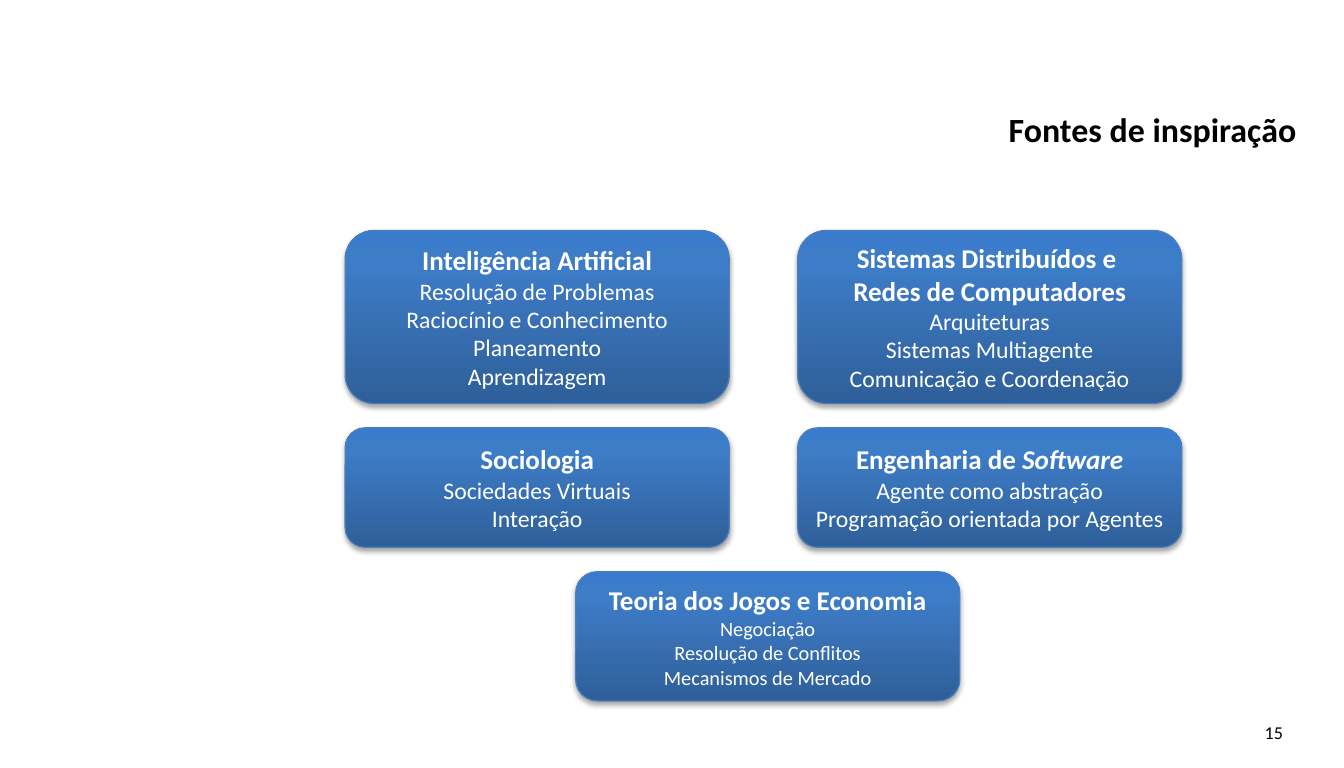
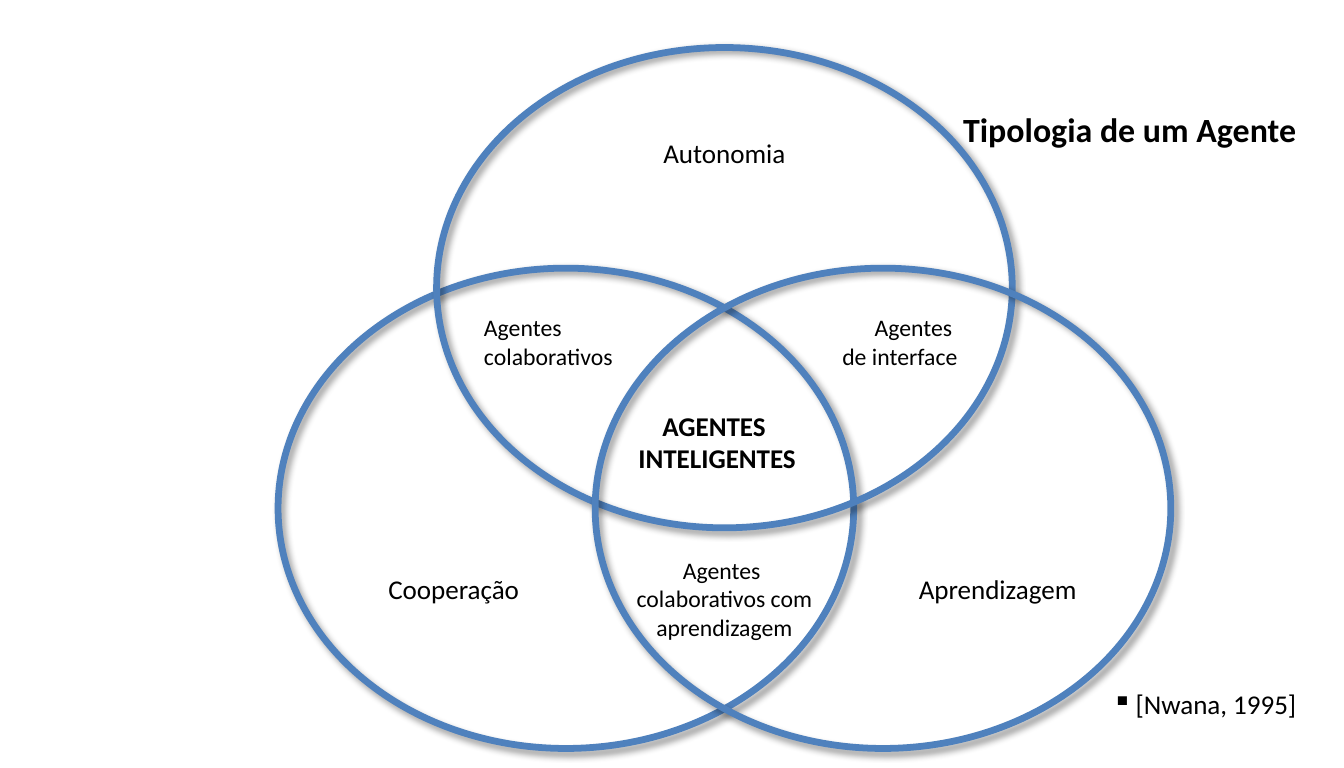
from dataclasses import dataclass

from pptx import Presentation
from pptx.dml.color import RGBColor
from pptx.enum.shapes import MSO_SHAPE
from pptx.enum.text import MSO_ANCHOR, PP_ALIGN
from pptx.oxml import parse_xml
from pptx.oxml.ns import nsdecls, qn
from pptx.util import Inches, Pt

LEFT, CENTER, RIGHT = PP_ALIGN.LEFT, PP_ALIGN.CENTER, PP_ALIGN.RIGHT
TOP, MIDDLE = MSO_ANCHOR.TOP, MSO_ANCHOR.MIDDLE
ROUNDED, OVAL = MSO_SHAPE.ROUNDED_RECTANGLE, MSO_SHAPE.OVAL


@dataclass(frozen=True)
class Theme:
    """Colours, type sizes and effects shared by the slides."""
    font: str = "Calibri"
    ink: str = "000000"
    card_ink: str = "FFFFFF"
    card_line: str = "4B7EBC"
    card_stops: tuple = ((0, "2F5F99"), (80, "3D7CC7"), (100, "3A7CCB"))
    circle_line: str = "4F81BD"
    card_shadow: tuple = (35, 3.1, 1.8, 90)
    circle_shadow: tuple = (40, 4, 3, 45)
    title: float = 20
    heading: float = 16
    detail: float = 14
    small: float = 12
    number: float = 10.7


THEME = Theme()
MARGIN, CONTENT_WIDTH = 1.57, 9.06
NO_INSETS = (0, 0)
TEXT_INSETS = (0.1, 0.05)
NUMBER_INSETS = (0.11, 0.06)

CARD_WIDTH, CARD_GAP, ROW_GAP = 3.15, 0.56, 0.2
CARDS_LEFT, CARDS_TOP, LAST_CARD_LEFT = 2.83, 1.89, 4.72
CARD_ROWS = [
    (1.42, CARDS_LEFT, THEME.detail, [
        ([["Inteligência Artificial"]],
         ["Resolução de Problemas", "Raciocínio e Conhecimento", "Planeamento", "Aprendizagem"]),
        ([["Sistemas Distribuídos e "], ["Redes de Computadores"]],
         ["Arquiteturas", "Sistemas Multiagente", "Comunicação e Coordenação"]),
    ]),
    (0.98, CARDS_LEFT, THEME.detail, [
        ([["Sociologia"]], ["Sociedades Virtuais", "Interação"]),
        ([["Engenharia de ", "Software"]],
         ["Agente como abstração", "Programação orientada por Agentes"]),
    ]),
    (1.06, LAST_CARD_LEFT, THEME.small, [
        ([["Teoria dos Jogos e Economia"]],
         ["Negociação", "Resolução de Conflitos", "Mecanismos de Mercado"]),
    ]),
]

CIRCLE_WIDTH, CIRCLE_HEIGHT = 4.72, 3.94
APEX_LEFT, APEX_TOP, SPREAD, DROP = 3.58, 0.39, 1.3, 1.81
LABEL_WIDTH = 2.28
LABELS = [
    (7.04, 4.65, 0.37, CENTER, THEME.heading, False, ["Aprendizagem"]),
    (2.58, 4.65, 0.37, CENTER, THEME.heading, False, ["Cooperação"]),
    (4.8, 1.07, 0.37, CENTER, THEME.heading, False, ["Autonomia"]),
    (4.74, 3.31, 0.64, CENTER, THEME.heading, True, ["AGENTES ", "INTELIGENTES"]),
    (3.87, 2.52, 0.57, LEFT, THEME.detail, False, ["Agentes", "colaborativos"]),
    (5.67, 2.52, 0.57, RIGHT, THEME.detail, False, ["Agentes ", "de interface"]),
    (4.8, 4.51, 0.81, CENTER, THEME.detail, False,
     ["Agentes ", "colaborativos com", "aprendizagem"]),
]


def font_format(size, bold=False, italic=False):
    """Return the font values of one run."""
    return {"name": THEME.font, "size": Pt(size), "bold": bold, "italic": italic}


def apply_format(target, values):
    """Set each named value on the target."""
    for name, value in values.items():
        setattr(target, name, value)


def write_text(frame, paragraphs, color, align, anchor=TOP, insets=TEXT_INSETS, wrap=True):
    """Fill a text frame with paragraphs made of (text, format) runs."""
    side, edge = map(Inches, insets)
    apply_format(frame, {
        "word_wrap": wrap, "vertical_anchor": anchor,
        "margin_left": side, "margin_right": side,
        "margin_top": edge, "margin_bottom": edge,
    })
    for index, runs in enumerate(paragraphs):
        paragraph = frame.add_paragraph() if index else frame.paragraphs[0]
        paragraph.alignment = align
        for text, values in runs:
            run = paragraph.add_run()
            run.text = text
            apply_format(run.font, values)
            run.font.color.rgb = RGBColor.from_string(color)


def add_text(slide, box, lines, size, align, bold=False, **layout):
    """Add a text box with one paragraph per line and return its frame."""
    frame = slide.shapes.add_textbox(*map(Inches, box)).text_frame
    values = font_format(size, bold)
    write_text(frame, [[(line, values)] for line in lines], THEME.ink, align, **layout)
    return frame


def add_outlined(slide, preset, box, line_color, line_width, shadow):
    """Add a preset shape with an outline and an outer shadow."""
    shape = slide.shapes.add_shape(preset, *map(Inches, box))
    shape.fill.background()
    shape.line.color.rgb = RGBColor.from_string(line_color)
    shape.line.width = Pt(line_width)
    shape.shadow.inherit = False
    opacity, blur, distance, angle = shadow
    shape._element.spPr.find(qn("a:effectLst")).append(parse_xml(
        f'<a:outerShdw {nsdecls("a")} blurRad="{Pt(blur)}" dist="{Pt(distance)}" '
        f'dir="{angle * 60000}" rotWithShape="0"><a:srgbClr val="000000">'
        f'<a:alpha val="{opacity * 1000}"/></a:srgbClr></a:outerShdw>'))
    return shape


def fill_gradient(shape, stops):
    """Fill a shape with colour stops running from bottom to top."""
    stop_xml = "".join(
        f'<a:gs pos="{position * 1000}"><a:srgbClr val="{color}"/></a:gs>'
        for position, color in stops)
    properties = shape._element.spPr
    properties.replace(properties.find(qn("a:noFill")), parse_xml(
        f'<a:gradFill {nsdecls("a")} rotWithShape="1"><a:gsLst>{stop_xml}</a:gsLst>'
        '<a:lin ang="16200000" scaled="0"/></a:gradFill>'))


def add_card(slide, box, headings, topics, topic_size):
    """Add a gradient card with bold headings above its topics."""
    card = add_outlined(slide, ROUNDED, box, THEME.card_line, 0.75, THEME.card_shadow)
    fill_gradient(card, THEME.card_stops)
    paragraphs = [
        [(text, font_format(THEME.heading, True, italic=position > 0))
         for position, text in enumerate(heading)]
        for heading in headings]
    paragraphs += [[(topic, font_format(topic_size))] for topic in topics]
    write_text(card.text_frame, paragraphs, THEME.card_ink, CENTER, MIDDLE, wrap=False)


def add_citation(slide, text):
    """Add a right-aligned source reference with a square bullet."""
    frame = add_text(slide, (MARGIN, 5.64, CONTENT_WIDTH, 0.27), [text],
                     THEME.heading, RIGHT, insets=NO_INSETS)
    properties = frame.paragraphs[0]._p.get_or_add_pPr()
    indent = Inches(0.19)
    properties.set("marL", str(indent))
    properties.set("indent", str(-indent))
    properties.append(parse_xml(f'<a:buChar {nsdecls("a")} char="▪"/>'))


def add_titled_slide(deck, title):
    """Add a blank slide with the shared title."""
    slide = deck.slides.add_slide(deck.slide_layouts[6])
    add_text(slide, (MARGIN, 0.89, CONTENT_WIDTH, 0.79), [title],
             THEME.title, RIGHT, bold=True, insets=NO_INSETS)
    return slide


def build_inspiration(deck):
    """Build the slide of inspiration sources."""
    slide = add_titled_slide(deck, "Fontes de inspiração")
    add_text(slide, (8.06, 5.84, 2.57, 0.34), ["15"], THEME.number, RIGHT,
             anchor=MIDDLE, insets=NUMBER_INSETS)
    top = CARDS_TOP
    for height, left, topic_size, cards in CARD_ROWS:
        for column, (headings, topics) in enumerate(cards):
            card_left = left + column * (CARD_WIDTH + CARD_GAP)
            add_card(slide, (card_left, top, CARD_WIDTH, height), headings, topics, topic_size)
        top += height + ROW_GAP


def build_typology(deck):
    """Build the slide of overlapping agent types."""
    slide = add_titled_slide(deck, "Tipologia de um Agente")
    for across, down in ((-1, 1), (0, 0), (1, 1)):
        box = (APEX_LEFT + across * SPREAD, APEX_TOP + down * DROP, CIRCLE_WIDTH, CIRCLE_HEIGHT)
        add_outlined(slide, OVAL, box, THEME.circle_line, 4, THEME.circle_shadow)
    for left, top, height, align, size, bold, lines in LABELS:
        add_text(slide, (left, top, LABEL_WIDTH, height), lines, size, align, bold)
    add_citation(slide, "[Nwana, 1995]")


def main():
    """Build and save the presentation."""
    deck = Presentation()
    deck.slide_width, deck.slide_height = Inches(11.02), Inches(6.3)
    build_inspiration(deck)
    build_typology(deck)
    deck.save("out.pptx")


if __name__ == "__main__":
    main()
